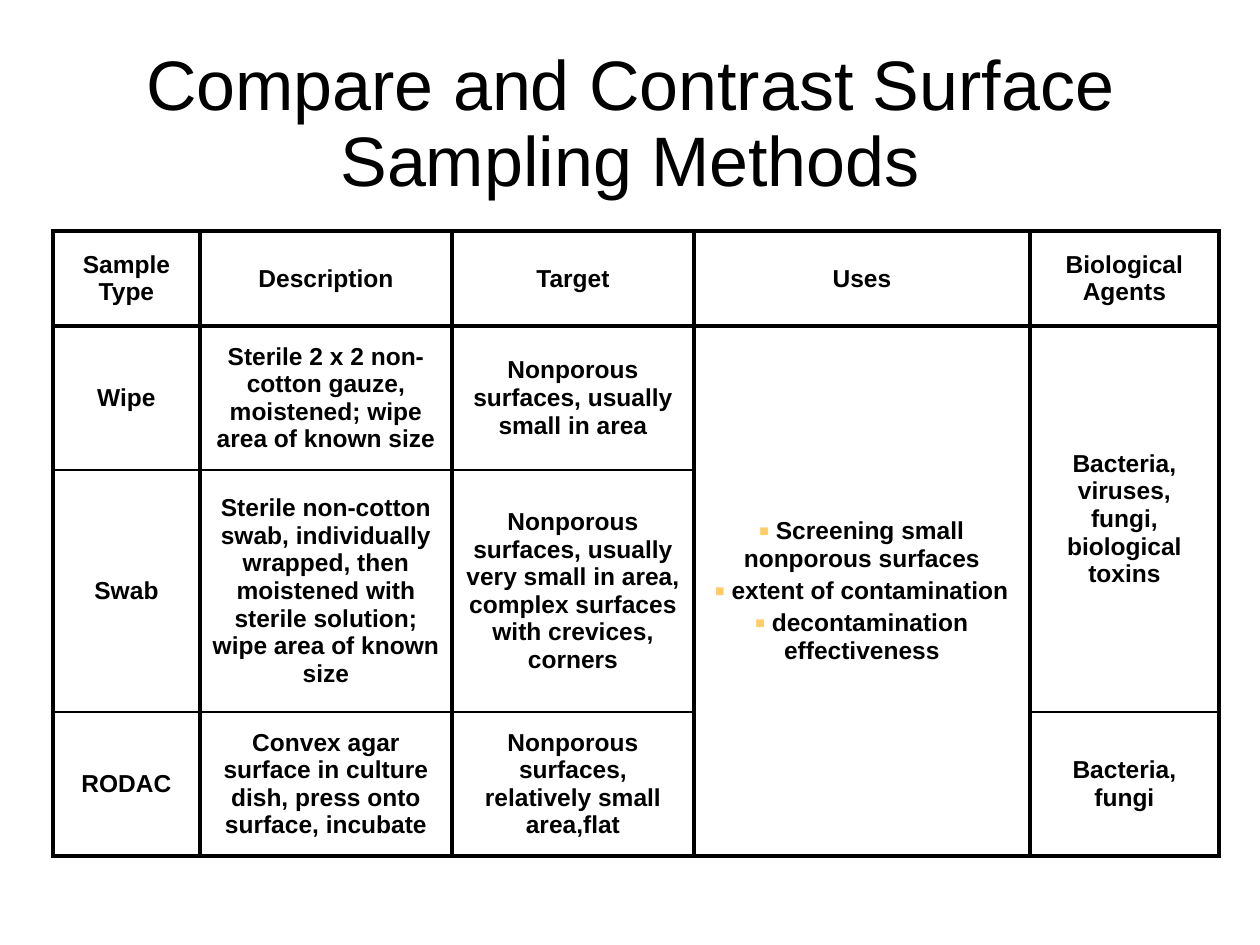
"""Build a slide with a table that compares surface sampling methods."""
from dataclasses import dataclass
from typing import Any

from lxml.etree import SubElement
from pptx import Presentation
from pptx.dml.color import RGBColor
from pptx.enum.text import MSO_ANCHOR, MSO_AUTO_SIZE, PP_ALIGN
from pptx.oxml.ns import qn
from pptx.slide import Slide
from pptx.util import Pt

EMU_PER_PX = 914400 / 126


@dataclass(frozen=True)
class Theme:
    """Colours, type sizes and line widths of the slide."""
    font: str = "Arial"
    text: str = "000000"
    paper: str = "FFFFFF"
    bullet: str = "FFCC66"
    title_size: float = 40
    cell_size: float = 14
    paragraph_gap: float = 2.8
    thick: float = 2.25
    thin: float = 1


@dataclass(frozen=True)
class Entry:
    """One table cell with its position, paragraphs and row span."""
    row: int
    column: int
    lines: tuple[str, ...]
    span: int = 1
    bulleted: bool = False


THEME = Theme()
TITLE = "Compare and Contrast Surface Sampling Methods"
TITLE_BOX = (105, 42, 1050, 168)
TABLE_ORIGIN = (53, 231)
COLUMN_WIDTHS = (147, 252, 242, 336, 189)
ROW_HEIGHTS = (95, 144, 242, 144)
HEADINGS = ("Sample Type", "Description", "Target", "Uses", "Biological Agents")
METHODS = (
    ("Wipe", "Sterile 2 x 2 non-cotton gauze, moistened; wipe area of known size",
     "Nonporous surfaces, usually small in area"),
    ("Swab", "Sterile non-cotton swab, individually wrapped, then moistened with "
     "sterile solution; wipe area of known size",
     "Nonporous surfaces, usually very small in area, complex surfaces with crevices, corners"),
    ("RODAC", "Convex agar surface in culture dish, press onto surface, incubate",
     "Nonporous surfaces, relatively small area,flat"),
)
USES = (" Screening small nonporous surfaces", " extent of contamination",
        " decontamination effectiveness")
ENTRIES = [
    Entry(row, column, (text,))
    for row, texts in enumerate((HEADINGS, *METHODS))
    for column, text in enumerate(texts)
] + [
    Entry(1, 3, USES, span=3, bulleted=True),
    Entry(1, 4, ("Bacteria, viruses, fungi, biological toxins",), span=2),
    Entry(3, 4, ("Bacteria, fungi",)),
]


def px(length: int) -> int:
    """Turn pixels into EMU."""
    return round(length * EMU_PER_PX)


def apply_format(target: Any, values: dict[str, Any]) -> None:
    """Set each named attribute on the target."""
    for name, value in values.items():
        setattr(target, name, value)


def format_paragraph(paragraph: Any, size: float, bold: bool, **spacing: Any) -> None:
    """Centre a paragraph and set its font and spacing."""
    apply_format(paragraph, {"alignment": PP_ALIGN.CENTER, **spacing})
    for run in paragraph.runs:
        apply_format(run.font, {"name": THEME.font, "size": Pt(size), "bold": bold})
        run.font.color.rgb = RGBColor.from_string(THEME.text)


def add_bullet(paragraph: Any) -> None:
    """Give a paragraph a small square bullet."""
    properties = paragraph._p.get_or_add_pPr()
    properties.set("marL", "0")
    properties.set("indent", "0")
    colour = SubElement(properties, qn("a:buClr"))
    SubElement(colour, qn("a:srgbClr"), val=THEME.bullet)
    SubElement(properties, qn("a:buSzPct"), val="65000")
    SubElement(properties, qn("a:buFont"), typeface=THEME.font)
    SubElement(properties, qn("a:buChar"), char="■")


def add_borders(cell: Any, first_row: int, last_row: int) -> None:
    """Draw thick borders, with thin rules between the methods."""
    top = THEME.thin if first_row > 1 else THEME.thick
    bottom = THEME.thin if 0 < last_row < len(METHODS) else THEME.thick
    widths = {"lnL": THEME.thick, "lnR": THEME.thick, "lnT": top, "lnB": bottom}
    properties = cell._tc.get_or_add_tcPr()
    for side, width in widths.items():
        line = SubElement(properties, qn(f"a:{side}"), w=str(Pt(width)))
        fill = SubElement(line, qn("a:solidFill"))
        SubElement(fill, qn("a:srgbClr"), val=THEME.text)


def fill_entry(table: Any, entry: Entry) -> None:
    """Merge, write and style one table entry."""
    cell = table.cell(entry.row, entry.column)
    last_row = entry.row + entry.span - 1
    if entry.span > 1:
        cell.merge(table.cell(last_row, entry.column))
    cell.text = "\n".join(entry.lines)
    cell.vertical_anchor = MSO_ANCHOR.MIDDLE
    for paragraph in cell.text_frame.paragraphs:
        format_paragraph(paragraph, THEME.cell_size, True,
                         space_before=Pt(THEME.paragraph_gap))
        if entry.bulleted:
            add_bullet(paragraph)
    for row in range(entry.row, last_row + 1):
        part = table.cell(row, entry.column)
        add_borders(part, entry.row, last_row)
        part.fill.solid()
        part.fill.fore_color.rgb = RGBColor.from_string(THEME.paper)


def add_title(slide: Slide) -> None:
    """Place and format the title placeholder."""
    title = slide.shapes.title
    sides = ("left", "top", "width", "height")
    apply_format(title, dict(zip(sides, map(px, TITLE_BOX))))
    title.text = TITLE
    apply_format(title.text_frame, {"vertical_anchor": MSO_ANCHOR.MIDDLE,
                                    "word_wrap": True, "auto_size": MSO_AUTO_SIZE.NONE})
    format_paragraph(title.text_frame.paragraphs[0], THEME.title_size, False,
                     line_spacing=0.9)


def add_comparison(slide: Slide) -> None:
    """Add the table of sampling methods."""
    box = (*TABLE_ORIGIN, sum(COLUMN_WIDTHS), sum(ROW_HEIGHTS))
    table = slide.shapes.add_table(len(ROW_HEIGHTS), len(COLUMN_WIDTHS),
                                   *map(px, box)).table
    apply_format(table, {"first_row": False, "horz_banding": False})
    for column, width in zip(table.columns, COLUMN_WIDTHS):
        column.width = px(width)
    for row, height in zip(table.rows, ROW_HEIGHTS):
        row.height = px(height)
    for entry in ENTRIES:
        fill_entry(table, entry)


def main() -> None:
    """Build and save the presentation."""
    presentation = Presentation()
    apply_format(presentation, {"slide_width": px(1260), "slide_height": px(945)})
    slide = presentation.slides.add_slide(presentation.slide_layouts[5])
    add_title(slide)
    add_comparison(slide)
    presentation.save("out.pptx")


if __name__ == "__main__":
    main()
